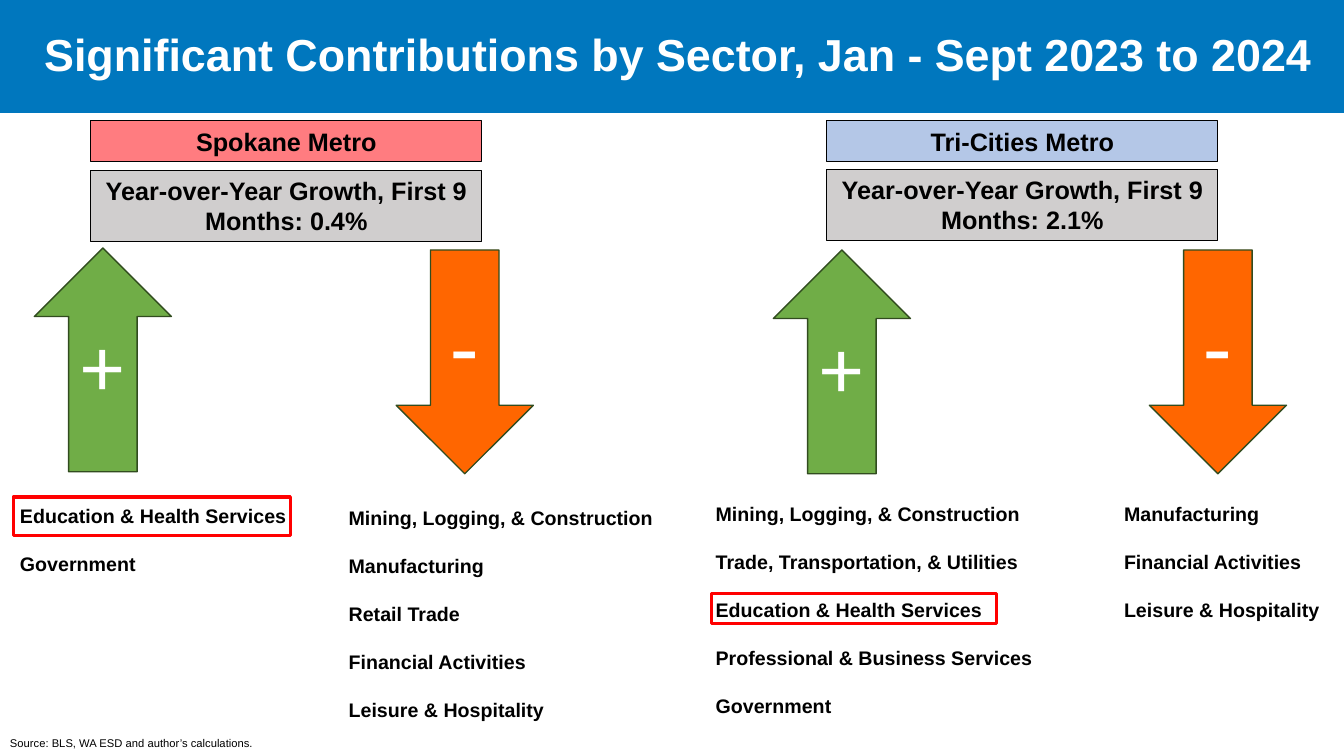
from dataclasses import dataclass

from pptx import Presentation
from pptx.dml import color as c
from pptx.enum import shapes as s, text as t
from pptx.shapes.autoshape import Shape
from pptx.util import Inches, Pt


@dataclass(frozen=True)
class Theme:
    blue: str = "0077BE"
    white: str = "FFFFFF"
    black: str = "000000"
    gray: str = "D0CECE"
    rose: str = "FF7C80"
    sky: str = "B4C7E7"
    green: str = "70AD47"
    orange: str = "FF6600"
    edge: str = "314C1F"
    red: str = "FF0000"
    font: str = "Arial"
    sign: str = "Calibri"
    title: int = 32
    head: int = 18
    body: int = 14
    note: int = 8
    plus: int = 60
    minus: int = 66
    gap: float = 17.5


@dataclass(frozen=True)
class Box:
    left: float
    top: float
    width: float
    height: float

    def lengths(self) -> list[int]:
        return [Inches(v) for v in (self.left, self.top, self.width, self.height)]


@dataclass(frozen=True)
class Sectors:
    box: Box
    names: list[str]


@dataclass(frozen=True)
class Metro:
    name: str
    fill: str
    left: float
    rate: str
    rate_top: float
    up: tuple[float, float]
    down: tuple[float, float]
    gains: Sectors
    losses: Sectors
    mark: Box


THEME = Theme()
METROS = [
    Metro(
        "Spokane Metro", THEME.rose, 0.9, "0.4%", 1.69, (0.34, 2.46), (3.93, 2.48),
        Sectors(Box(0.1, 4.95, 2.86, 1.05),
                ["Education & Health Services", "Government"]),
        Sectors(Box(3.36, 4.97, 3.23, 2.22),
                ["Mining, Logging, & Construction", "Manufacturing", "Retail Trade",
                 "Financial Activities", "Leisure & Hospitality"]),
        Box(0.13, 4.93, 2.75, 0.38),
    ),
    Metro(
        "Tri-Cities Metro", THEME.sky, 8.2, "2.1%", 1.68, (7.67, 2.48), (11.4, 2.48),
        Sectors(Box(7, 4.93, 3.57, 2.22),
                ["Mining, Logging, & Construction", "Trade, Transportation, & Utilities",
                 "Education & Health Services", "Professional & Business Services",
                 "Government"]),
        Sectors(Box(11.05, 4.93, 2.24, 1.51),
                ["Manufacturing", "Financial Activities", "Leisure & Hospitality"]),
        Box(7.06, 5.89, 2.82, 0.3),
    ),
]

deck = Presentation()
deck.slide_width, deck.slide_height = Inches(13.33), Inches(7.5)
slide = deck.slides.add_slide(deck.slide_layouts[6])


def rgb(code: str) -> c.RGBColor:
    return c.RGBColor.from_string(code)


def write(shape: Shape, lines: list[str], size: int, color: str = THEME.black,
          font: str = THEME.font, bold: bool = True, align=t.PP_ALIGN.LEFT,
          anchor=t.MSO_ANCHOR.TOP, gap: float = 0) -> None:
    """Fill a shape with one paragraph per line, gap points apart."""
    frame = shape.text_frame
    frame.word_wrap = True
    frame.vertical_anchor = anchor
    frame.text = "\n".join(lines)
    for i, para in enumerate(frame.paragraphs):
        para.alignment = align
        if i and gap:
            para.space_before = Pt(gap)
        for run in para.runs:
            run.font.name, run.font.size, run.font.bold = font, Pt(size), bold
            run.font.color.rgb = rgb(color)


def draw(box: Box, fill: str | None = None, line: str | None = None,
         width: float = 0.75, kind=s.MSO_SHAPE.RECTANGLE) -> Shape:
    shape = slide.shapes.add_shape(kind, *box.lengths())
    shape.shadow.inherit = False
    if fill:
        shape.fill.solid()
        shape.fill.fore_color.rgb = rgb(fill)
    else:
        shape.fill.background()
    if line:
        shape.line.color.rgb = rgb(line)
        shape.line.width = Pt(width)
    else:
        shape.line.fill.background()
    return shape


def label(box: Box, lines: list[str], size: int, **style) -> Shape:
    shape = slide.shapes.add_textbox(*box.lengths())
    write(shape, lines, size, **style)
    return shape


def banner(box: Box, words: str, fill: str) -> None:
    write(draw(box, fill, THEME.black), [words], THEME.head, align=t.PP_ALIGN.CENTER)


def arrow(spot: tuple[float, float], sign: str, fill: str, size: int,
          turn: int = 0) -> None:
    shape = draw(Box(*spot, 1.36, 2.22), fill, THEME.edge, 1, s.MSO_SHAPE.DOWN_ARROW)
    shape.rotation = turn
    write(shape, [sign], size, THEME.white, THEME.sign, False,
          t.PP_ALIGN.CENTER, t.MSO_ANCHOR.MIDDLE)


def panel(metro: Metro) -> None:
    """Draw one metro's banners, arrows, sector lists and red frame."""
    banner(Box(metro.left, 1.2, 3.88, 0.4), metro.name, metro.fill)
    banner(Box(metro.left, metro.rate_top, 3.88, 0.71),
           f"Year-over-Year Growth, First 9 Months: {metro.rate}", THEME.gray)
    arrow(metro.up, "+", THEME.green, THEME.plus, 180)
    arrow(metro.down, "-", THEME.orange, THEME.minus)
    for group in (metro.gains, metro.losses):
        label(group.box, group.names, THEME.body, gap=THEME.gap)
    draw(metro.mark, line=THEME.red, width=2.25)


def main() -> None:
    draw(Box(0, 0, 13.33, 1.12), THEME.blue)
    title = label(Box(0.34, 0.26, 12.89, 0.6),
                  ["Significant Contributions by Sector, Jan - Sept 2023 to 2024"],
                  THEME.title, color=THEME.white, anchor=t.MSO_ANCHOR.BOTTOM)
    title.text_frame.paragraphs[0].line_spacing = 0.9
    label(Box(0, 7.26, 5.11, 0.24), ["Source: BLS, WA ESD and author’s calculations."],
          THEME.note, bold=False)
    for metro in METROS:
        panel(metro)
    deck.save("out.pptx")


if __name__ == "__main__":
    main()
